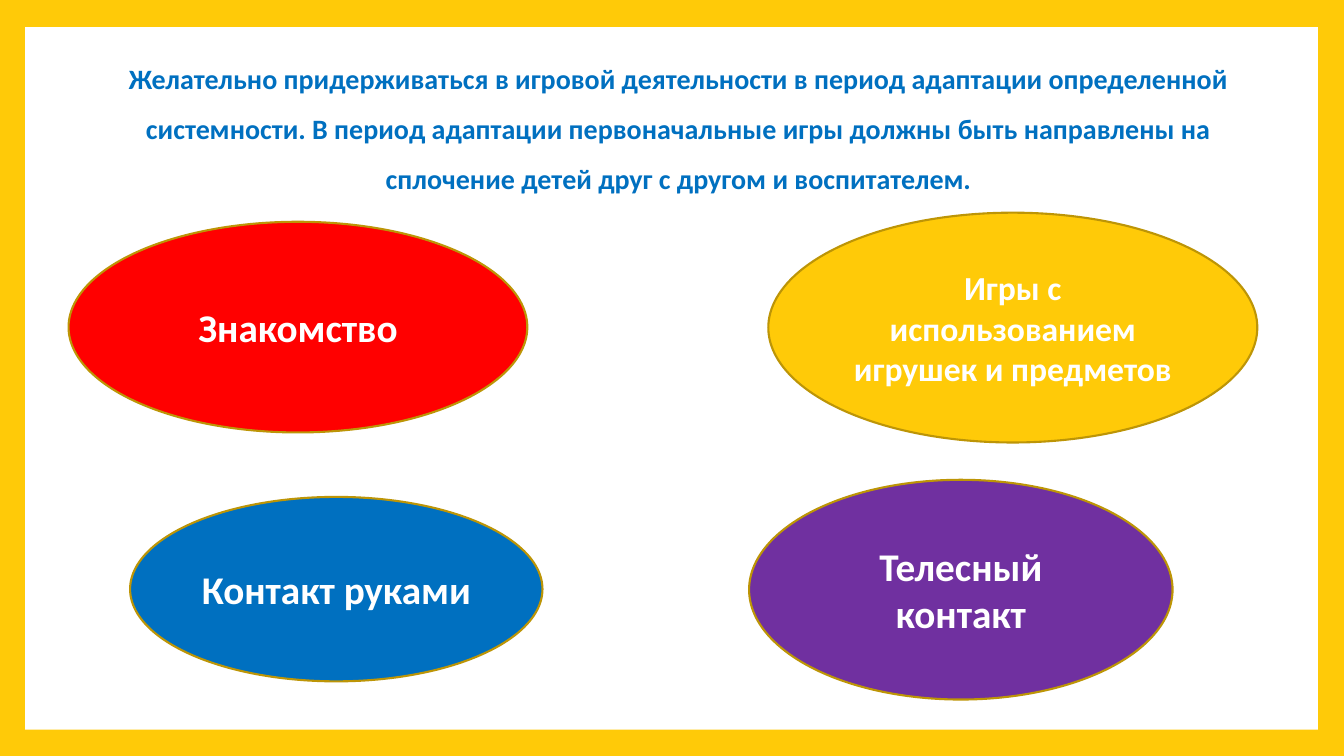
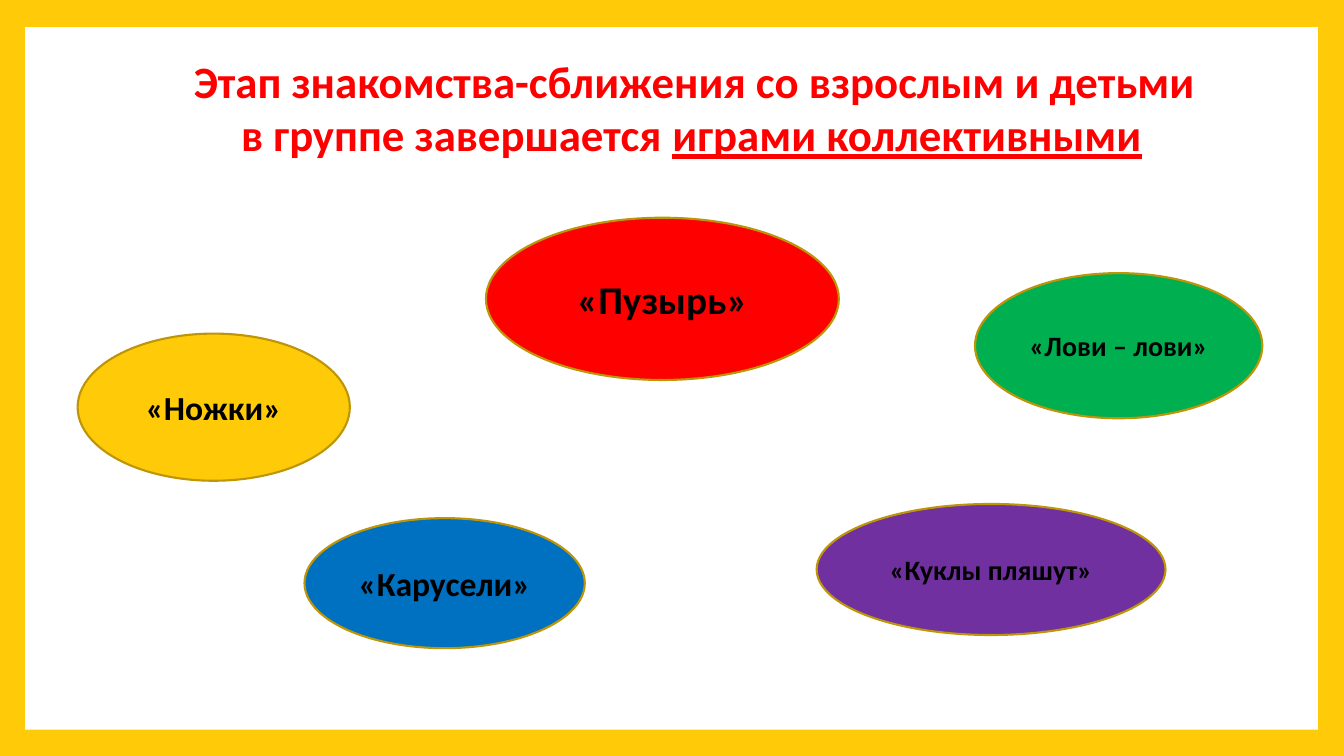
from dataclasses import dataclass
from typing import NamedTuple

from pptx import Presentation
from pptx.dml.color import RGBColor
from pptx.enum.shapes import MSO_SHAPE as Shape
from pptx.enum.text import MSO_ANCHOR as Anchor, PP_ALIGN as Align
from pptx.util import Inches, Pt


class Box(NamedTuple):
    left: float
    top: float
    width: float
    height: float

    def inner(self, left, top, width, height):
        return Box(self.left + left, self.top + top, width, height)

    def lengths(self):
        return [Inches(value) for value in self]


@dataclass(frozen=True)
class Theme:
    gold: str = "FFCA08"
    outline: str = "BD9506"
    white: str = "FFFFFF"
    black: str = "000000"
    ink: str = "111111"
    red: str = "FF0000"
    blue: str = "0070C0"
    purple: str = "7030A0"
    green: str = "00B050"
    font: str = "Calibri"
    serif: str = "Times New Roman"
    title: int = 32
    large: int = 28
    medium: int = 24
    small: int = 20
    space: int = 18
    outline_width: float = 1.5


THEME = Theme()
PANEL = Box(0.25, 0.27, 12.82, 6.97)


def rgb(color):
    return RGBColor.from_string(color)


def add_run(paragraph, text, size, color, bold=True, underline=None, font=THEME.font):
    run = paragraph.add_run()
    run.text = text
    run.font.name = font
    run.font.size = Pt(size)
    run.font.bold = bold
    run.font.underline = underline
    run.font.color.rgb = rgb(color)


def add_filled(slide, preset, box, color):
    figure = slide.shapes.add_shape(preset, *box.lengths())
    figure.shadow.inherit = False
    figure.fill.solid()
    figure.fill.fore_color.rgb = rgb(color)
    return figure


def add_framed_slide(deck):
    slide = deck.slides.add_slide(deck.slide_layouts[6])
    panel = add_filled(slide, Shape.RECTANGLE, PANEL, THEME.white)
    panel.line.fill.background()
    return slide


def add_heading(slide, box, line_spacing=1.0):
    frame = slide.shapes.add_textbox(*box.lengths()).text_frame
    frame.word_wrap = True
    paragraph = frame.paragraphs[0]
    paragraph.alignment = Align.CENTER
    paragraph.line_spacing = line_spacing
    return paragraph


def add_bubbles(slide, box, bubbles, text_color):
    for place, color, label, size in bubbles:
        bubble = add_filled(slide, Shape.OVAL, box.inner(*place), color)
        bubble.line.color.rgb = rgb(THEME.outline)
        bubble.line.width = Pt(THEME.outline_width)
        frame = bubble.text_frame
        frame.word_wrap = True
        frame.vertical_anchor = Anchor.MIDDLE
        paragraph = frame.paragraphs[0]
        paragraph.alignment = Align.CENTER
        add_run(paragraph, label, size, text_color)


def build_play_system(deck, box):
    slide = add_framed_slide(deck)
    heading = add_heading(slide, box.inner(0.73, 0.12, 11.5, 1.62), 1.5)
    add_run(
        heading,
        "Желательно придерживаться в игровой деятельности в период адаптации "
        "определенной системности. В период адаптации первоначальные игры должны "
        "быть направлены на сплочение детей друг с другом и воспитателем.",
        THEME.small,
        THEME.blue,
    )
    kinds = [
        ((0.43, 1.93, 4.55, 2.09), THEME.red, "Знакомство", THEME.large),
        ((7.37, 1.84, 4.85, 2.28), THEME.gold,
         "Игры с использованием игрушек и предметов", THEME.medium),
        ((1.04, 4.66, 4.09, 1.83), THEME.blue, "Контакт руками", THEME.large),
        ((7.18, 4.49, 4.2, 2.18), THEME.purple, "Телесный контакт", THEME.large),
    ]
    add_bubbles(slide, box, kinds, THEME.white)


def build_group_games(deck, box):
    slide = add_framed_slide(deck)
    heading = add_heading(slide, box.inner(1.42, 0.21, 10.38, 1.18))
    add_run(heading, " ", THEME.space, THEME.ink, bold=False, font=THEME.serif)
    add_run(
        heading,
        "Этап знакомства-сближения со взрослым и детьми в группе завершается ",
        THEME.title,
        THEME.red,
    )
    add_run(heading, "играми коллективными", THEME.title, THEME.red, underline=True)
    games = [
        ((0.52, 3.04, 2.7, 1.46), THEME.gold, "«Ножки»", THEME.medium),
        ((4.57, 1.89, 3.5, 1.61), THEME.red, "«Пузырь»", THEME.large),
        ((9.42, 2.44, 2.85, 1.44), THEME.green, "«Лови – лови»", THEME.small),
        ((2.77, 4.87, 2.78, 1.29), THEME.blue, "«Карусели»", THEME.medium),
        ((7.85, 4.73, 3.46, 1.3), THEME.purple, "«Куклы пляшут»", THEME.small),
    ]
    add_bubbles(slide, box, games, THEME.black)


def main():
    deck = Presentation()
    deck.slide_width = Inches(13.33)
    deck.slide_height = Inches(7.5)
    backdrop = deck.slide_master.background.fill
    backdrop.solid()
    backdrop.fore_color.rgb = rgb(THEME.gold)
    build_play_system(deck, PANEL)
    build_group_games(deck, PANEL)
    deck.save("out.pptx")


if __name__ == "__main__":
    main()
